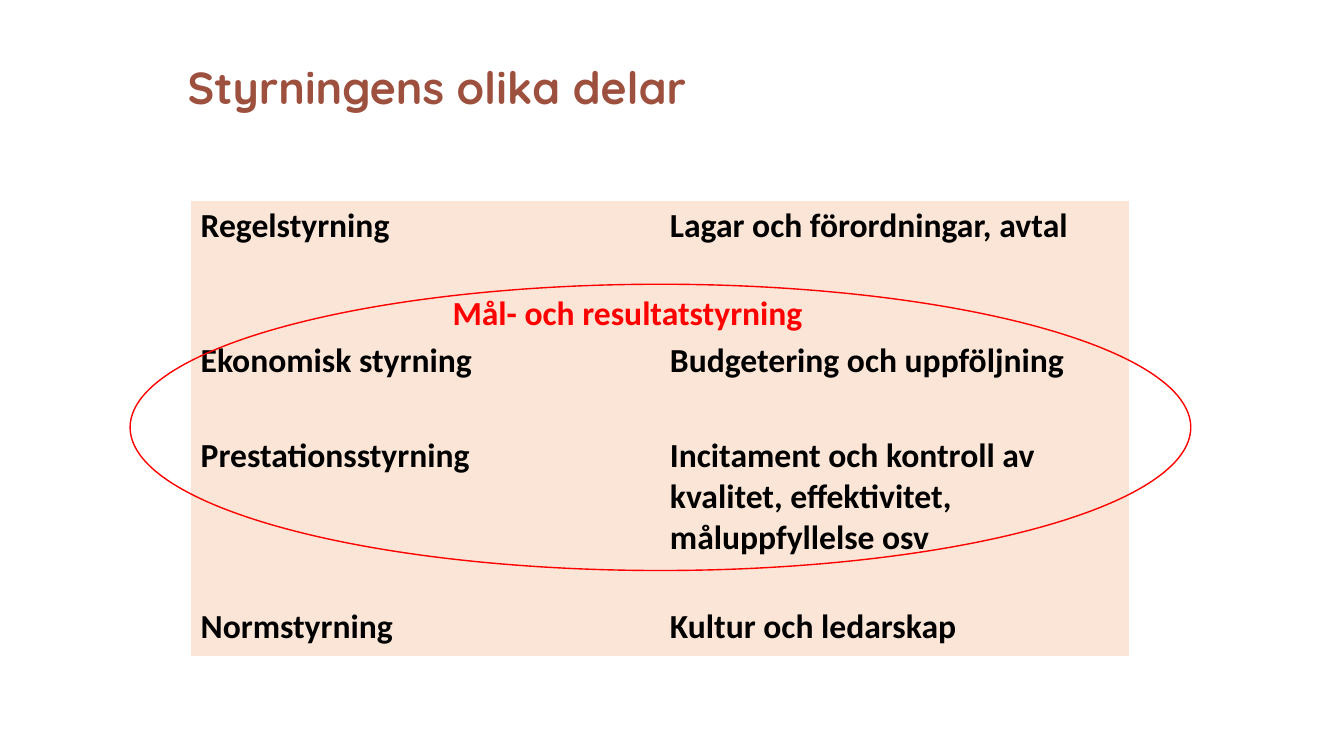
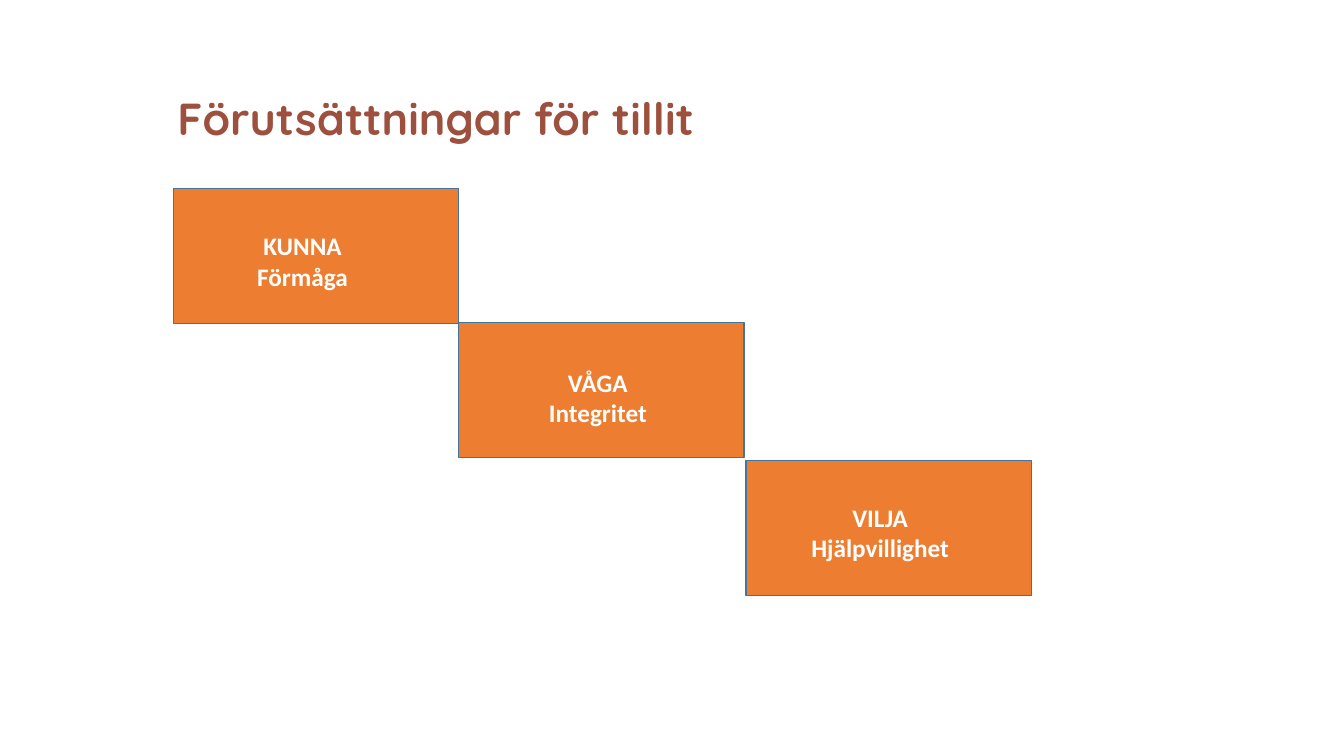
"""Build two slides on governance and the conditions for trust."""
from pptx import Presentation, util as u
from pptx.dml.color import RGBColor
from pptx.enum import shapes, text
from pptx.oxml.ns import qn

RUST, PEACH, RED = "9D503E", "FBE5D6", "FF0000"
ORANGE, BLUE, BLACK, WHITE = "ED7D31", "43739E", "000000", "FFFFFF"
PLAIN = "{2D5ABB26-0587-4C30-8999-92F81FD0307C}"

PARTS = [
    ("Regelstyrning", "Lagar och förordningar, avtal", 1.34),
    ("Ekonomisk styrning", "Budgetering och uppföljning", 0.94),
    ("Prestationsstyrning",
     "Incitament och kontroll av kvalitet, effektivitet, måluppfyllelse osv", 1.7),
    ("Normstyrning", "Kultur och ledarskap", 0.54),
]
STEPS = [
    (("KUNNA", "Förmåga"), (1.72, 1.87), (1.9, 2.24)),
    (("VÅGA", "Integritet"), (4.55, 3.2), (4.83, 3.59)),
    (("VILJA", "Hjälpvillighet"), (7.4, 4.57), (7.63, 4.93)),
]
STEP = (2.83, 1.34)
LABEL = (2.2, 0.71)


def rgb(code):
    return RGBColor.from_string(code)


def inch(*sizes):
    return [u.Inches(s) for s in sizes]


def style(par, size, color, name="Calibri"):
    font = par.font
    font.name, font.size, font.bold = name, u.Pt(size), True
    font.color.rgb = rgb(color)


def start(deck, title, *box):
    slide = deck.slides.add_slide(deck.slide_layouts.get_by_name("Title Only"))
    head = slide.shapes.title
    head.left, head.top, head.width, head.height = inch(*box)
    frame = head.text_frame
    frame.text = title
    frame.vertical_anchor = text.MSO_ANCHOR.MIDDLE
    par = frame.paragraphs[0]
    par.alignment, par.line_spacing = text.PP_ALIGN.LEFT, 0.9
    style(par, 32, RUST, "Quicksand")
    return slide


def outline(slide, kind, box, line, fill=None):
    shape = slide.shapes.add_shape(kind, *inch(*box))
    shape.shadow.inherit = False
    shape.line.color.rgb, shape.line.width = rgb(line), u.Pt(1)
    if fill:
        shape.fill.solid()
        shape.fill.fore_color.rgb = rgb(fill)
    else:
        shape.fill.background()


def label(slide, lines, box, size, color, align):
    frame = slide.shapes.add_textbox(*inch(*box)).text_frame
    frame.word_wrap = True
    frame.text = "\n".join(lines)
    for par in frame.paragraphs:
        par.alignment = align
        style(par, size, color)


def grid(slide, rows, left, top, width):
    high = sum(row[-1] for row in rows)
    table = slide.shapes.add_table(len(rows), 2, *inch(left, top, width, high)).table
    table.first_row = table.horz_banding = False
    table._tbl.tblPr.find(qn("a:tableStyleId")).text = PLAIN
    for r, (*words, tall) in enumerate(rows):
        table.rows[r].height = u.Inches(tall)
        for c, word in enumerate(words):
            cell = table.cell(r, c)
            cell.text = word
            cell.fill.solid()
            cell.fill.fore_color.rgb = rgb(PEACH)
            style(cell.text_frame.paragraphs[0], 24, BLACK)


def main():
    deck = Presentation()
    deck.slide_width, deck.slide_height = inch(13.33, 7.5)

    slide = start(deck, "Styrningens olika delar", 1.76, 0.17, 6.3, 1.45)
    grid(slide, PARTS, 1.89, 1.99, 9.31)
    outline(slide, shapes.MSO_SHAPE.OVAL, (1.29, 2.82, 10.52, 2.84), RED)
    label(slide, ["Mål- och resultatstyrning"], (4.39, 2.85, 4.07, 0.5),
          24, RED, text.PP_ALIGN.LEFT)

    slide = start(deck, "Förutsättningar för tillit", 1.66, 0.57, 8.27, 1.26)
    for lines, spot, place in STEPS:
        outline(slide, shapes.MSO_SHAPE.RECTANGLE, spot + STEP, BLUE, ORANGE)
        label(slide, lines, place + LABEL, 18, WHITE, text.PP_ALIGN.CENTER)

    deck.save("out.pptx")


if __name__ == "__main__":
    main()
